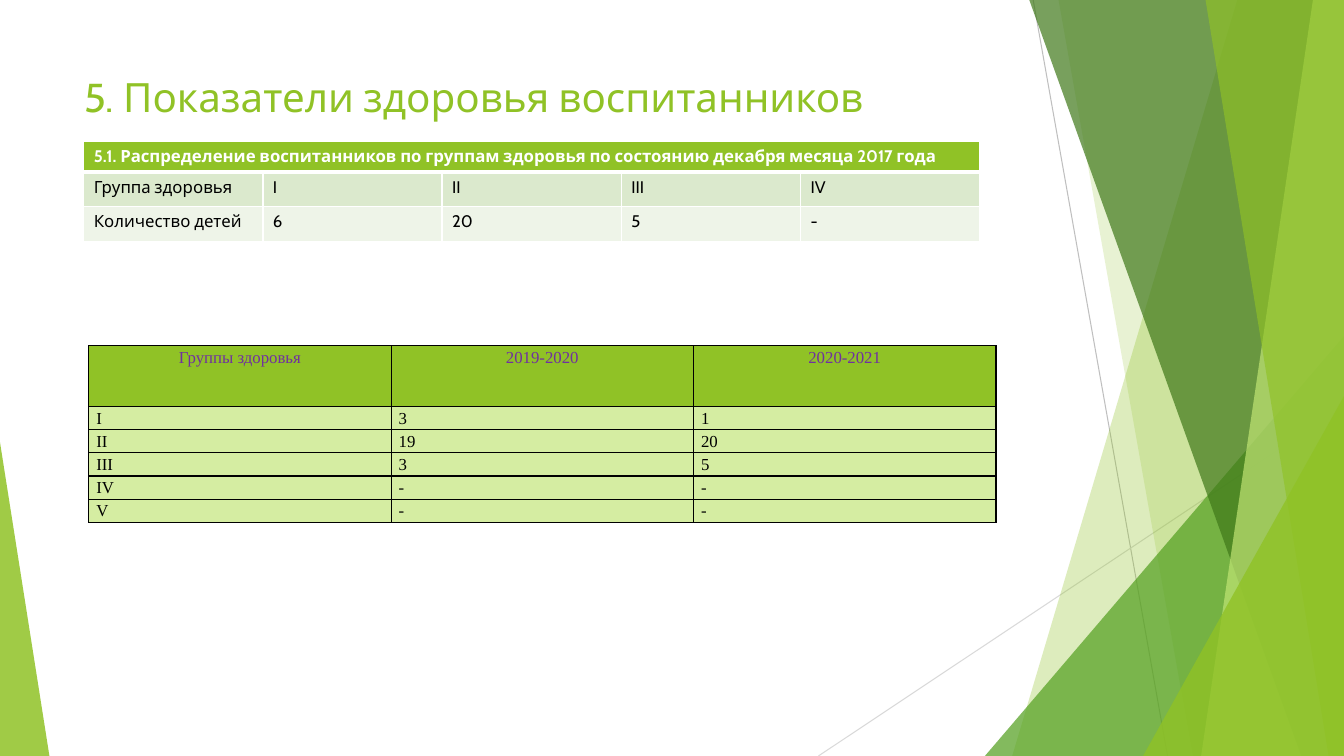
from lxml import etree
from pptx import Presentation
from pptx.dml.color import RGBColor
from pptx.enum.shapes import MSO_CONNECTOR, MSO_SHAPE
from pptx.enum.text import MSO_ANCHOR, PP_ALIGN
from pptx.oxml.ns import qn
from pptx.util import Pt

STRAIGHT = MSO_CONNECTOR.STRAIGHT
TRIANGLE = MSO_SHAPE.ISOSCELES_TRIANGLE
TOP = MSO_ANCHOR.TOP
LEFT, CENTER, JUSTIFY = PP_ALIGN.LEFT, PP_ALIGN.CENTER, PP_ALIGN.JUSTIFY

WHITE = RGBColor(0xFF, 0xFF, 0xFF)
BLACK = RGBColor(0x00, 0x00, 0x00)
PURPLE = RGBColor(0x70, 0x30, 0xA0)
LIME = RGBColor(0x90, 0xC2, 0x26)
GREEN = RGBColor(0x54, 0xA0, 0x21)
FOREST = RGBColor(0x3F, 0x78, 0x19)
PALE_LIME = RGBColor(0xC0, 0xE4, 0x74)
BAND_DARK = RGBColor(0xDB, 0xE9, 0xCD)
BAND_LIGHT = RGBColor(0xEE, 0xF4, 0xE8)
GROUP_FILL = RGBColor(0xD5, 0xED, 0xA2)
GRAY = RGBColor(0xBF, 0xBF, 0xBF)
LIGHT_GRAY = RGBColor(0xD9, 0xD9, 0xD9)

WIDTH, HEIGHT = 960, 540
BLEED = -0.7

CURRENT_GROUPS = [
    ["5.1. Распределение воспитанников по группам здоровья по состоянию декабря месяца 2017 года", "", "", "", ""],
    ["Группа здоровья", "I", "II", "III", "IV"],
    ["Количество детей", "6", "20", "5", "-"],
]
GROUPS_BY_YEAR = [
    ["Группы здоровья", "2019-2020", "2020-2021"],
    ["I", "3", "1"],
    ["II", "19", "20"],
    ["III", "3", "5"],
    ["IV", "-", "-"],
    ["V", "-", "-"],
]


class SlideBuilder:
    heading_font = "Cabin"
    table_font = "Times New Roman"

    def __init__(self, page):
        self.page = page

    def line(self, start, end, color):
        connector = self.page.shapes.add_connector(STRAIGHT, *map(Pt, start + end))
        connector.line.color.rgb = color
        connector.line.width = Pt(0.75)
        etree.SubElement(connector._element.spPr, qn("a:effectLst"))

    def paint(self, shape, color, opacity):
        shape.shadow.inherit = False
        shape.fill.solid()
        shape.fill.fore_color.rgb = color
        shape.line.fill.background()
        tint = shape._element.spPr.find(qn("a:solidFill"))[0]
        etree.SubElement(tint, qn("a:alpha"), val=str(opacity * 1000))

    def facet(self, top_left, bottom_left, color, opacity):
        builder = self.page.shapes.build_freeform(Pt(top_left), Pt(BLEED))
        corners = [(WIDTH, BLEED), (WIDTH, HEIGHT), (bottom_left, HEIGHT)]
        builder.add_line_segments([(Pt(x), Pt(y)) for x, y in corners], close=True)
        self.paint(builder.convert_to_shape(), color, opacity)

    def corner(self, left, top, width, apex, color, opacity):
        shape = self.page.shapes.add_shape(TRIANGLE, Pt(left), Pt(top), Pt(width), Pt(HEIGHT - top))
        shape.adjustments[0] = apex
        self.paint(shape, color, opacity)

    def add_span(self, para, text, size, font, color, bold=False):
        span = para.add_run()
        span.text = text
        span.font.size = Pt(size)
        span.font.name = font
        span.font.color.rgb = color
        span.font.bold = bold

    def title(self, left, top, width, height, text):
        box = self.page.shapes.add_textbox(Pt(left), Pt(top), Pt(width), Pt(height))
        frame = box.text_frame
        frame.word_wrap = True
        frame.vertical_anchor = TOP
        self.add_span(frame.paragraphs[0], text, 28.8, self.heading_font, LIME)

    def borders(self, cell, color, bottom=1):
        properties = cell._tc.get_or_add_tcPr()
        for side, width in (("L", 1), ("R", 1), ("T", 1), ("B", bottom)):
            edge = etree.SubElement(properties, qn(f"a:ln{side}"), w=str(Pt(width)))
            fill = etree.SubElement(edge, qn("a:solidFill"))
            etree.SubElement(fill, qn("a:srgbClr"), val=str(color))

    def table(self, left, top, column_width, heights, rows, style):
        columns = len(rows[0])
        frame = self.page.shapes.add_table(
            len(rows), columns, Pt(left), Pt(top), Pt(column_width * columns), Pt(sum(heights)))
        grid = frame.table
        for column in grid.columns:
            column.width = Pt(column_width)
        for row, height in zip(grid.rows, heights):
            row.height = Pt(height)
        for row_index, values in enumerate(rows):
            for column_index, value in enumerate(values):
                style(grid.cell(row_index, column_index), row_index, value)
        return grid

    def banded_cell(self, cell, row, value):
        self.borders(cell, WHITE, bottom=1 if row else 3)
        cell.fill.solid()
        cell.fill.fore_color.rgb = (LIME, BAND_DARK, BAND_LIGHT)[row]
        para = cell.text_frame.paragraphs[0]
        para.alignment = LEFT
        if value:
            self.add_span(para, value, 12, self.heading_font, BLACK if row else WHITE, bold=row == 0)

    def ruled_cell(self, cell, row, value):
        self.borders(cell, BLACK)
        cell.fill.solid()
        cell.fill.fore_color.rgb = GROUP_FILL if row else LIME
        cell.margin_left = cell.margin_right = Pt(5.4)
        cell.margin_top = cell.margin_bottom = Pt(0)
        para = cell.text_frame.paragraphs[0]
        para.alignment = JUSTIFY if row else CENTER
        para.line_spacing = 1.15
        para.space_after = Pt(10)
        self.add_span(para, value, 12, self.table_font, BLACK if row else PURPLE)


def main():
    deck = Presentation()
    deck.slide_width, deck.slide_height = Pt(WIDTH), Pt(HEIGHT)
    slide = SlideBuilder(deck.slides.add_slide(deck.slide_layouts[6]))

    slide.line((738, 0), (834, HEIGHT), GRAY)
    slide.line((WIDTH, 290), (584.6, HEIGHT), LIGHT_GRAY)
    slide.facet(884, 723, LIME, 30)
    slide.facet(756, 852, LIME, 20)
    slide.corner(703.5, 240, 256.5, 1, GREEN, 72)
    slide.facet(735, 929.5, FOREST, 70)
    slide.facet(938, 858, PALE_LIME, 70)
    slide.facet(861, 949, LIME, 65)
    slide.corner(816.5, 283, 143.5, 1, LIME, 80)
    slide.corner(0, 316, 35.3, 0, LIME, 85)

    slide.title(53, 48.2, 677, 35.3, "5. Показатели здоровья воспитанников")
    current = slide.table(59.8, 101, 128, [16.6, 25, 25], CURRENT_GROUPS, slide.banded_cell)
    current.cell(0, 0).merge(current.cell(0, 4))
    slide.table(63.4, 247, 216, [43.2] + [15.4] * 5, GROUPS_BY_YEAR, slide.ruled_cell)

    deck.save("out.pptx")


if __name__ == "__main__":
    main()
